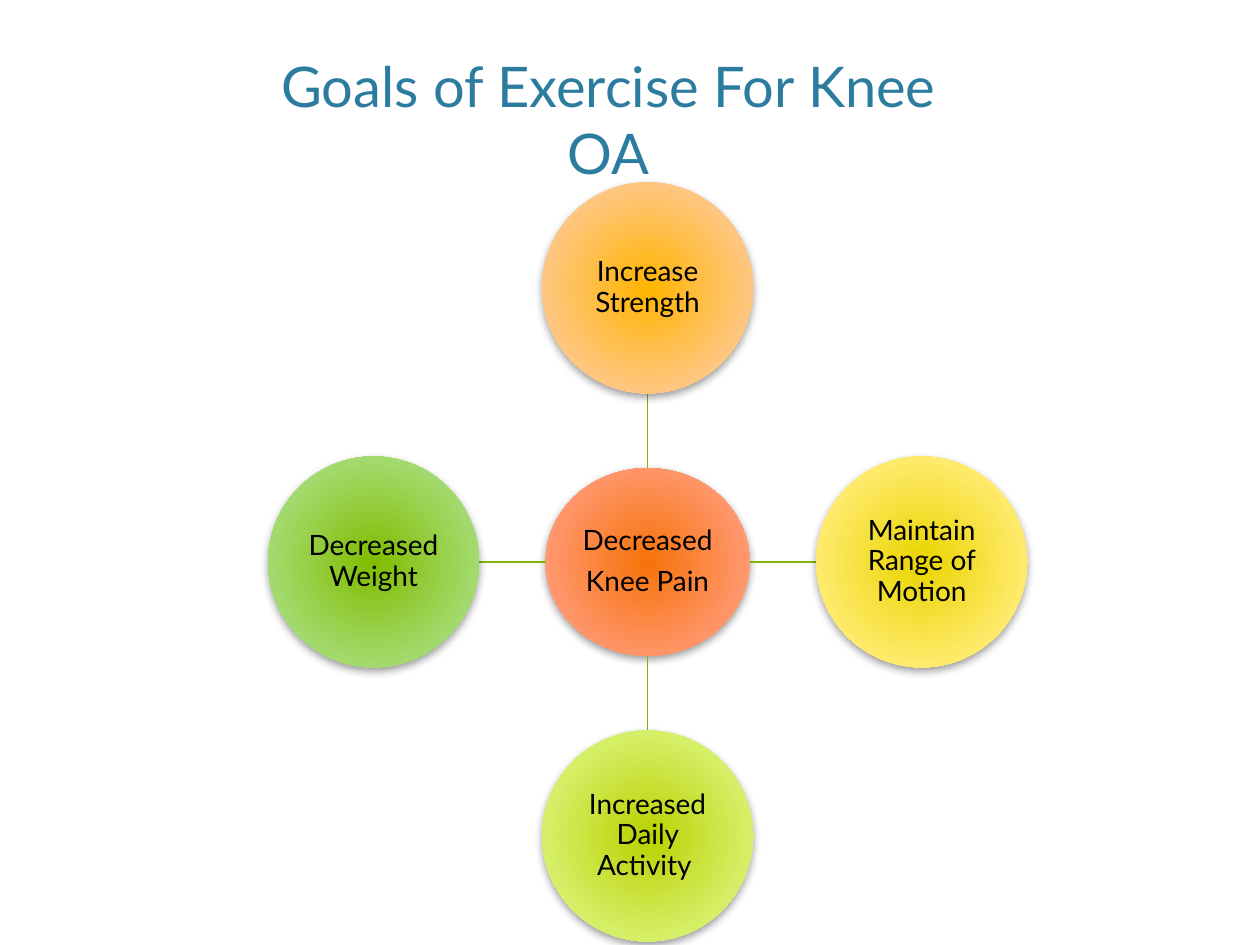
import pptx
import pptx.dml.color
import pptx.enum.shapes
import pptx.enum.text
import pptx.oxml
import pptx.oxml.ns
import pptx.util

COLUMNS, ROWS = 100, 75
NAMESPACE = pptx.oxml.ns.nsdecls("a")


def color(value):
    return pptx.dml.color.RGBColor.from_string(value)


def write(frame, text, size=16, fill="000000", inset=None, spacing=None, after=None, anchor="TOP"):
    frame.word_wrap = True
    frame.vertical_anchor = pptx.enum.text.MSO_ANCHOR[anchor]
    if inset is not None:
        for side in ("left", "top", "right", "bottom"):
            setattr(frame, f"margin_{side}", pptx.util.Inches(inset))
    frame.text = text
    for paragraph in frame.paragraphs:
        paragraph.alignment = pptx.enum.text.PP_ALIGN.CENTER
        paragraph.line_spacing = spacing
        paragraph.space_after = after
        font = paragraph.runs[0].font
        font.name = "Lato"
        font.size = pptx.util.Pt(size)
        font.color.rgb = color(fill)


class Diagram:
    """Draws styled elements on one slide, measured in grid columns and rows."""

    line_color = "7EB606"
    title_color = "2C7C9F"

    def __init__(self, presentation):
        self.slide = presentation.slides.add_slide(presentation.slide_layouts[6])
        self.column = presentation.slide_width / COLUMNS
        self.row = presentation.slide_height / ROWS

    def place(self, x, y):
        return round(x * self.column), round(y * self.row)

    def title(self, text, left, top, width, height):
        box = self.slide.shapes.add_textbox(*self.place(left, top), *self.place(width, height))
        write(box.text_frame, text, size=32, fill=self.title_color)

    def circle(self, text, x, y, radius_x, radius_y, colors):
        shape = self.slide.shapes.add_shape(
            pptx.enum.shapes.MSO_SHAPE.OVAL,
            *self.place(x - radius_x, y - radius_y),
            *self.place(2 * radius_x, 2 * radius_y),
        )
        shape.line.fill.background()
        self.gradient(shape, colors)
        self.shadow(shape)
        write(shape.text_frame, text, inset=0.01, spacing=0.9, after=pptx.util.Pt(5.6), anchor="MIDDLE")

    def gradient(self, shape, colors):
        stops = "".join(
            f'<a:gs pos="{position}"><a:srgbClr val="{value}"/></a:gs>'
            for position, value in zip((0, 69000, 100000), colors)
        )
        fill = pptx.oxml.parse_xml(
            f'<a:gradFill {NAMESPACE} rotWithShape="1"><a:gsLst>{stops}</a:gsLst><a:path path="circle">'
            '<a:fillToRect l="100000" t="100000" r="100000" b="100000"/></a:path></a:gradFill>'
        )
        shape.element.spPr.find(pptx.oxml.ns.qn("a:prstGeom")).addnext(fill)

    def shadow(self, shape):
        shape.shadow.inherit = False
        effects = shape.element.spPr.find(pptx.oxml.ns.qn("a:effectLst"))
        effects.append(pptx.oxml.parse_xml(
            f'<a:outerShdw {NAMESPACE} blurRad="{pptx.util.Pt(5)}" dist="{pptx.util.Pt(2)}" '
            'dir="5400000" rotWithShape="0"><a:srgbClr val="000000">'
            '<a:alpha val="40000"/></a:srgbClr></a:outerShdw>'
        ))

    def spoke(self, start, end):
        connector = self.slide.shapes.add_connector(
            pptx.enum.shapes.MSO_CONNECTOR.STRAIGHT, *self.place(*start), *self.place(*end)
        )
        connector.line.color.rgb = color(self.line_color)
        connector.line.width = pptx.util.Pt(1)
        connector.element.spPr.append(pptx.oxml.parse_xml(f"<a:effectLst {NAMESPACE}/>"))


def main():
    presentation = pptx.Presentation()
    presentation.slide_width = pptx.util.Inches(10)
    presentation.slide_height = pptx.util.Inches(7.5)
    diagram = Diagram(presentation)

    hub_x, hub_y = 51.4, 44.6
    hub_width, hub_height = 8.1, 7.45
    reach, radius = 21.75, 8.37
    goals = [
        ("Increase Strength", 0, -1, ("FFB400", "FFC67F", "FFDEBD")),
        ("Maintain Range of Motion", 1, 0, ("E9D400", "FFEA6B", "FFF2B1")),
        ("Increased Daily Activity ", 0, 1, ("BAD200", "D6EF68", "E5F3B2")),
        ("Decreased Weight", -1, 0, ("80BC00", "A3DA6D", "CBE7B4")),
    ]

    diagram.circle("Decreased\nKnee Pain", hub_x, hub_y, hub_width, hub_height, ("F67309", "FF9569", "FEC3B0"))
    for text, across, down, colors in goals:
        diagram.spoke(
            (hub_x + across * hub_width, hub_y + down * hub_height),
            (hub_x + across * (reach - radius), hub_y + down * (reach - radius)),
        )
        diagram.circle(text, hub_x + across * reach, hub_y + down * reach, radius, radius, colors)
    diagram.title("Goals of Exercise For Knee OA", 19.7, 3.6, 57.2, 11.8)

    presentation.save("out.pptx")


if __name__ == "__main__":
    main()
